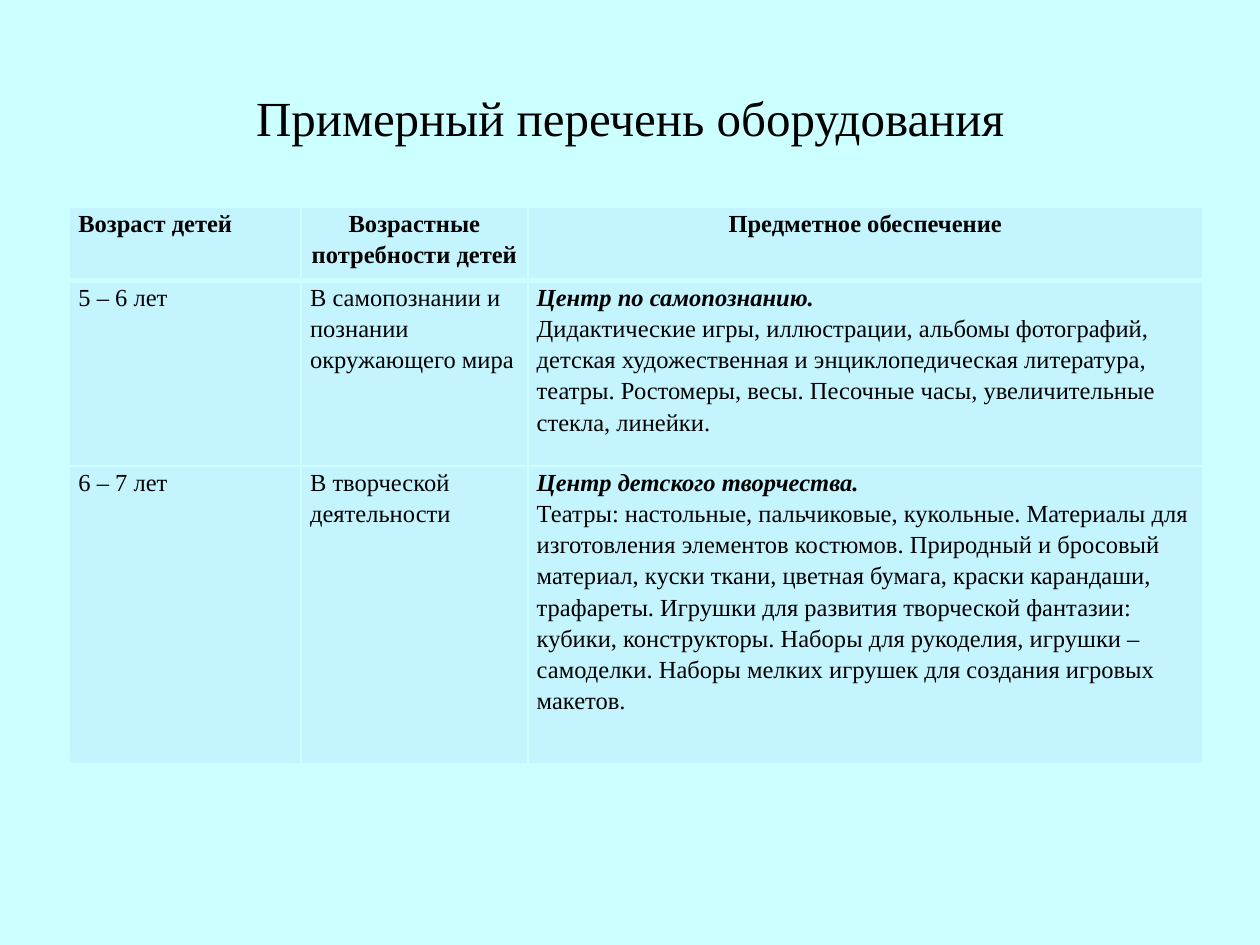
"""Build a slide with a table of play equipment by age of the children."""
from lxml import etree
from pptx import Presentation
from pptx import util as u
from pptx.dml.color import RGBColor
from pptx.enum import text
from pptx.oxml import ns

TITLE = "Примерный перечень оборудования"
HEAD = ["Возраст детей", "Возрастные потребности детей", "Предметное обеспечение"]
BODY = [
    ["5 – 6 лет", "В самопознании и познании окружающего мира",
     "Центр по самопознанию.\n"
     "Дидактические игры, иллюстрации, альбомы фотографий, детская художественная "
     "и энциклопедическая литература, театры. Ростомеры, весы. Песочные часы, "
     "увеличительные стекла, линейки."],
    ["6 – 7 лет", "В творческой деятельности",
     "Центр детского творчества.\n"
     "Театры: настольные, пальчиковые, кукольные. Материалы для изготовления "
     "элементов костюмов. Природный и бросовый материал, куски ткани, цветная "
     "бумага, краски карандаши, трафареты. Игрушки для развития творческой "
     "фантазии: кубики, конструкторы. Наборы для рукоделия, игрушки – самоделки. "
     "Наборы мелких игрушек для создания игровых макетов."],
]
ROWS = [HEAD] + BODY
WIDTHS = [4.67, 4.57, 13.61]
HEIGHTS = [1.49, 3.73, 6.0]
FONT = "Times New Roman"
BACK = RGBColor(0xCC, 0xFF, 0xFF)
FILL = RGBColor(0xC4, 0xF4, 0xFE)
INK = RGBColor(0, 0, 0)


def style(para, size, bold=False, slant=False):
    """Set the font of a paragraph."""
    font = para.font
    font.name, font.size, font.bold, font.italic = FONT, u.Pt(size), bold, slant
    font.color.rgb = INK


def edge(cell, side, width):
    """Draw one border of a cell."""
    props = cell._tc.get_or_add_tcPr()
    line = etree.Element(ns.qn(f"a:{side}"), w=str(u.Pt(width)))
    solid = etree.SubElement(line, ns.qn("a:solidFill"))
    etree.SubElement(solid, ns.qn("a:srgbClr"), val=str(BACK))
    props.insert(len(props) - 1, line)


def fill_cell(cell, words, row, col):
    """Put text, colour and borders into a cell."""
    cell.margin_left = cell.margin_right = u.Cm(0.18)
    cell.margin_top = cell.margin_bottom = 0
    cell.fill.solid()
    cell.fill.fore_color.rgb = FILL
    cell.text = words
    paras = cell.text_frame.paragraphs
    for i, para in enumerate(paras):
        lead = len(paras) > 1 and i == 0
        style(para, 14, row == 0 or lead, lead)
        para.line_spacing = 1.15
        center = row == 0 and col > 0
        para.alignment = text.PP_ALIGN.CENTER if center else text.PP_ALIGN.LEFT
    edge(cell, "lnL", 1)
    edge(cell, "lnR", 1)
    edge(cell, "lnT", 3 if row == 1 else 1)
    edge(cell, "lnB", 3 if row == 0 else 1)


def main():
    """Make the slide and save it."""
    prs = Presentation()
    prs.slide_width, prs.slide_height = u.Cm(25.4), u.Cm(19.05)
    slide = prs.slides.add_slide(prs.slide_layouts[5])
    slide.background.fill.solid()
    slide.background.fill.fore_color.rgb = BACK

    title = slide.shapes.title
    title.left, title.top = u.Cm(1.27), u.Cm(0.76)
    title.width, title.height = u.Cm(22.86), u.Cm(3.18)
    title.text = TITLE
    title.text_frame.vertical_anchor = text.MSO_ANCHOR.MIDDLE
    para = title.text_frame.paragraphs[0]
    para.alignment = text.PP_ALIGN.CENTER
    style(para, 28)

    frame = slide.shapes.add_table(
        len(ROWS), len(HEAD), u.Cm(1.4), u.Cm(4.17),
        u.Cm(sum(WIDTHS)), u.Cm(sum(HEIGHTS)))
    table = frame.table
    for col, width in zip(table.columns, WIDTHS):
        col.width = u.Cm(width)
    for row, height in zip(table.rows, HEIGHTS):
        row.height = u.Cm(height)
    for r, row in enumerate(ROWS):
        for c, words in enumerate(row):
            fill_cell(table.cell(r, c), words, r, c)
    prs.save("out.pptx")


if __name__ == "__main__":
    main()
